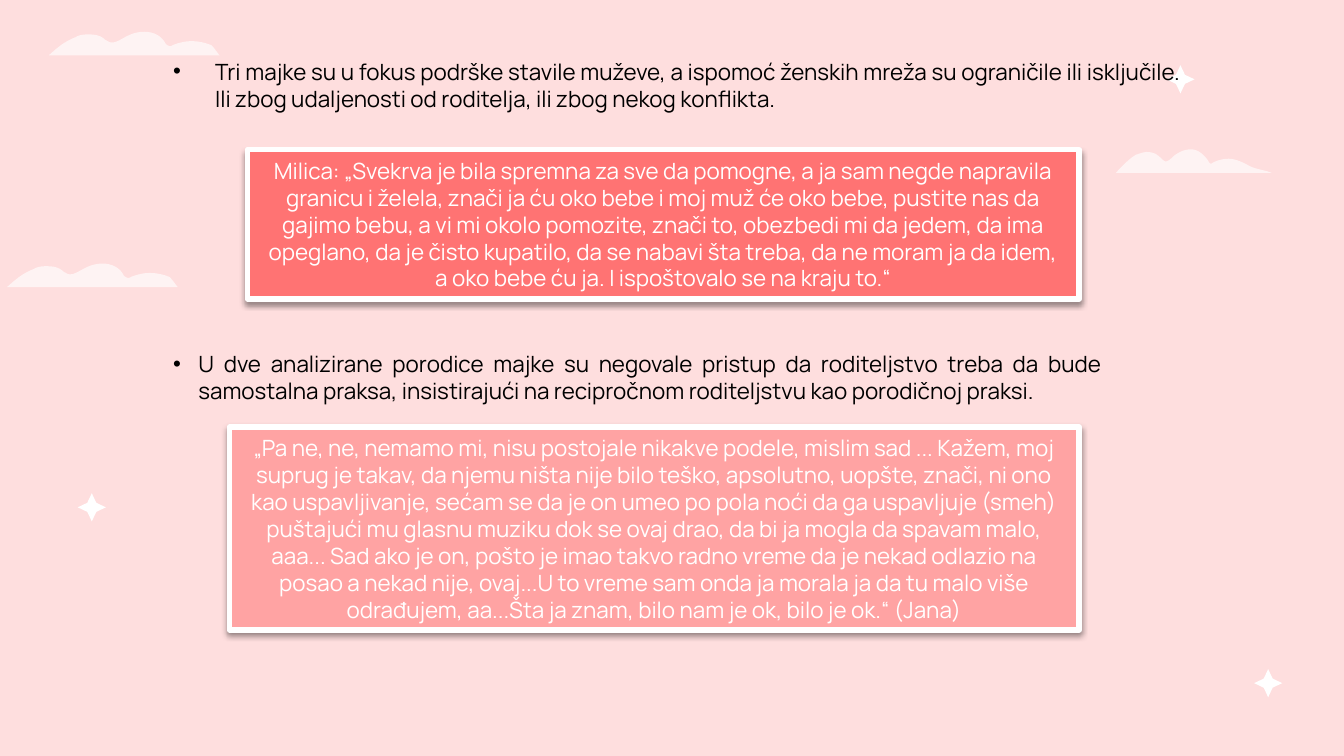
from dataclasses import dataclass

from lxml import etree
from pptx import Presentation
from pptx.dml.color import RGBColor
from pptx.enum.shapes import MSO_SHAPE
from pptx.enum.text import MSO_ANCHOR, MSO_AUTO_SIZE, PP_ALIGN
from pptx.oxml.ns import qn
from pptx.util import Pt

RECTANGLE = MSO_SHAPE.RECTANGLE
MIDDLE = MSO_ANCHOR.MIDDLE
GROW = MSO_AUTO_SIZE.SHAPE_TO_FIT_TEXT
CENTER, JUSTIFY = PP_ALIGN.CENTER, PP_ALIGN.JUSTIFY

COLORS = {
    "background": "FEDEDE",
    "white": "FFFFFF",
    "black": "000000",
    "coral": "FF7373",
    "salmon": "FFA3A3",
}
FONT = "Manrope"
FONT_SIZE = 12
OUTLINE_UNIT = 0.72
CURVE_STEPS = 8

Point = tuple[float, float]
Curve = tuple[Point, Point, Point]


@dataclass(frozen=True)
class Cloud:
    left: float
    top: float
    start: Point
    curves: tuple[Curve, ...]


@dataclass(frozen=True)
class Statement:
    left: float
    top: float
    width: float
    height: float
    indent: float
    text: str


@dataclass(frozen=True)
class Quote:
    left: float
    top: float
    width: float
    height: float
    color: str
    text: str


LONG_CLOUD = (
    ((65, 0), (60, 2), (55, 5)),
    ((53, 6), (50, 8), (47, 8)),
    ((45, 8), (44, 7), (42, 6)),
    ((39, 3), (35, 2), (30, 2)),
    ((27, 2), (23, 2), (20, 4)),
    ((12, 7), (6, 12), (0, 17.5)),
    ((0, 17.5), (127, 17.5), (127, 17.5)),
    ((125, 15), (123, 12), (121, 10)),
    ((116, 8), (111, 7), (106, 7)),
    ((102, 7), (97, 8), (92, 10)),
    ((91, 11), (89, 11), (87, 9)),
    ((84, 3), (78, 0), (71, 0)),
)
TAILED_CLOUD = (
    ((51, 0), (47, 2), (43, 5)),
    ((41, 7), (39, 9), (37, 9)),
    ((36, 9), (34, 7), (33, 6)),
    ((30, 3), (27, 2), (23, 2)),
    ((21, 2), (18, 3), (15, 4)),
    ((10, 7), (5, 12), (0, 17.5)),
    ((0, 17.5), (116, 17.5), (116, 17.5)),
    ((110, 15), (103, 15), (97, 11)),
    ((93, 9), (88, 7), (84, 7)),
    ((80, 7), (76, 8), (72, 10)),
    ((71, 11), (70, 11), (69, 9)),
    ((66, 4), (61, 0), (56, 0)),
)
CLOUDS = (
    Cloud(26.2, 17, (71, 0), LONG_CLOUD),
    Cloud(3.8, 141.2, (71, 0), LONG_CLOUD),
    Cloud(597.8, 80, (56, 0), TAILED_CLOUD),
)
SPARKLE_CENTERS = ((49.2, 271.8), (679.4, 366), (632.4, 42.5))
SPARKLE_ARM = ((0, -10.5), (2, -6.2), (3.4, -3.4), (6.2, -2))

STATEMENTS = (
    Statement(85.7, 27.4, 554.4, 94.3, 22.5,
              "Tri majke su u fokus podrške stavile muževe, a ispomoć ženskih mreža su "
              "ograničile ili isključile. Ili zbog udaljenosti od roditelja, ili zbog "
              "nekog konflikta."),
    Statement(85.7, 184.3, 511.9, 36, 13.5,
              "U dve analizirane porodice majke su negovale pristup da roditeljstvo treba "
              "da bude samostalna praksa, insistirajući na recipročnom roditeljstvu kao "
              "porodičnoj praksi."),
)
QUOTES = (
    Quote(132.5, 80.2, 445.7, 79.9, "coral",
          "Milica: „Svekrva je bila spremna za sve da pomogne, a ja sam negde napravila "
          "granicu i želela, znači ja ću oko bebe i moj muž će oko bebe, pustite nas da "
          "gajimo bebu, a vi mi okolo pomozite, znači to, obezbedi mi da jedem, da ima "
          "opeglano, da je čisto kupatilo, da se nabavi šta treba, da ne moram ja da idem, "
          "a oko bebe ću ja. I ispoštovalo se na kraju to.“"),
    Quote(122.9, 228.8, 455.3, 108.7, "salmon",
          "„Pa ne, ne, nemamo mi, nisu postojale nikakve podele, mislim sad ... Kažem, moj "
          "suprug je takav, da njemu ništa nije bilo teško, apsolutno, uopšte, znači, ni "
          "ono kao uspavljivanje, sećam se da je on umeo po pola noći da ga uspavljuje "
          "(smeh) puštajući mu glasnu muziku dok se ovaj drao, da bi ja mogla da spavam "
          "malo, aaa... Sad ako je on, pošto je imao takvo radno vreme da je nekad odlazio "
          "na posao a nekad nije, ovaj...U to vreme sam onda ja morala ja da tu malo više "
          "odrađujem, aa...Šta ja znam, bilo nam je ok, bilo je ok.“ (Jana)"),
)


def rgb(name: str) -> RGBColor:
    return RGBColor.from_string(COLORS[name])


def add_color(parent, name: str, alpha: int = 100) -> None:
    color = etree.SubElement(parent, qn("a:srgbClr"), val=COLORS[name])
    if alpha < 100:
        etree.SubElement(color, qn("a:alpha"), val=str(alpha * 1000))


def trace_curves(start: Point, curves: tuple[Curve, ...]) -> list[Point]:
    points = [start]
    for first, second, end in curves:
        origin = points[-1]
        for step in range(1, CURVE_STEPS + 1):
            t = step / CURVE_STEPS
            u = 1 - t
            points.append(tuple(
                u**3 * a + 3 * u**2 * t * b + 3 * u * t**2 * c + t**3 * d
                for a, b, c, d in zip(origin, first, second, end)))
    return points


def draw_outline(slide, left: float, top: float, points: list[Point], alpha: int = 100) -> None:
    corners = [(Pt(x * OUTLINE_UNIT), Pt(y * OUTLINE_UNIT)) for x, y in points]
    builder = slide.shapes.build_freeform(*corners[0])
    builder.add_line_segments(corners[1:], close=True)
    outline = builder.convert_to_shape(Pt(left), Pt(top))
    outline.shadow.inherit = False
    outline.line.fill.background()
    outline.fill.solid()
    outline.fill.fore_color.rgb = rgb("white")
    if alpha < 100:
        fill = outline.element.spPr.find(qn("a:solidFill"))
        fill.clear()
        add_color(fill, "white", alpha)


def draw_sparkle(slide, center: Point) -> None:
    points = []
    for cos, sin in ((1, 0), (0, 1), (-1, 0), (0, -1)):
        points += [(x * cos - y * sin, x * sin + y * cos) for x, y in SPARKLE_ARM]
    draw_outline(slide, *center, points)


def write_text(frame, text: str, color: str, alignment: PP_ALIGN) -> None:
    frame.text = text
    frame.word_wrap = True
    frame.auto_size = GROW
    paragraph = frame.paragraphs[0]
    paragraph.alignment = alignment
    font = paragraph.runs[0].font
    font.name, font.size = FONT, Pt(FONT_SIZE)
    font.color.rgb = rgb(color)


def draw_statement(slide, item: Statement) -> None:
    frame = slide.shapes.add_textbox(
        Pt(item.left), Pt(item.top), Pt(item.width), Pt(item.height)).text_frame
    write_text(frame, item.text, "black", JUSTIFY)
    properties = frame.paragraphs[0]._p.get_or_add_pPr()
    properties.set("marL", str(Pt(item.indent)))
    properties.set("indent", str(-Pt(item.indent)))
    add_color(etree.SubElement(properties, qn("a:buClr")), "black")
    etree.SubElement(properties, qn("a:buFont"), typeface="Arial")
    etree.SubElement(properties, qn("a:buChar"), char="•")


def draw_quote(slide, item: Quote) -> None:
    panel = slide.shapes.add_shape(
        RECTANGLE, Pt(item.left), Pt(item.top), Pt(item.width), Pt(item.height))
    panel.fill.solid()
    panel.fill.fore_color.rgb = rgb(item.color)
    panel.line.color.rgb = rgb("white")
    panel.line.width = Pt(3)
    panel.shadow.inherit = False
    shadow = etree.SubElement(
        panel.element.spPr.find(qn("a:effectLst")), qn("a:outerShdw"),
        blurRad=str(Pt(3.1)), dist=str(Pt(1.6)), dir="5400000", rotWithShape="0")
    add_color(shadow, "black", 38)
    panel.text_frame.vertical_anchor = MIDDLE
    write_text(panel.text_frame, item.text, "white", CENTER)


def main() -> None:
    """Build the slide of mothers' statements and quotes and save it."""
    deck = Presentation()
    deck.slide_width, deck.slide_height = Pt(720), Pt(405)
    slide = deck.slides.add_slide(deck.slide_layouts[6])
    slide.background.fill.solid()
    slide.background.fill.fore_color.rgb = rgb("background")
    for cloud in CLOUDS:
        draw_outline(slide, cloud.left, cloud.top, trace_curves(cloud.start, cloud.curves), 64)
    for center in SPARKLE_CENTERS:
        draw_sparkle(slide, center)
    for statement, quote in zip(STATEMENTS, QUOTES):
        draw_statement(slide, statement)
        draw_quote(slide, quote)
    deck.save("out.pptx")


if __name__ == "__main__":
    main()
